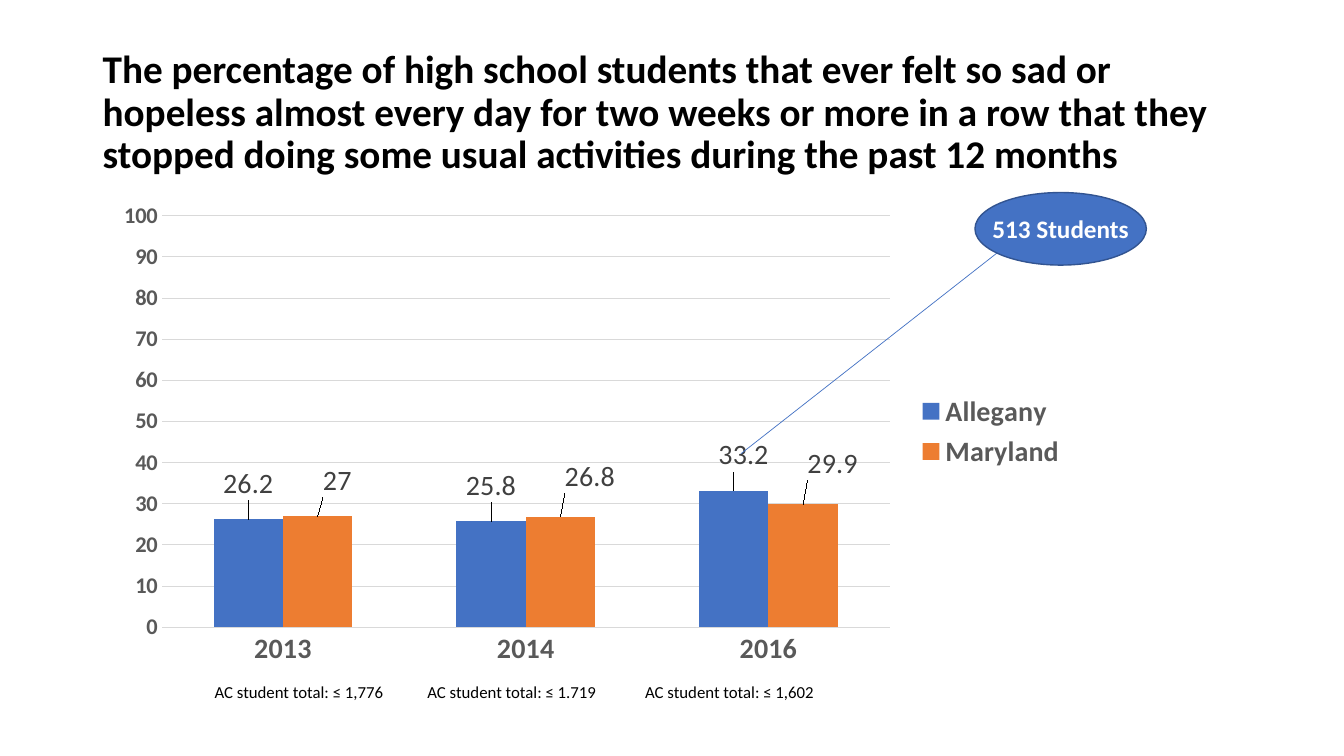
from lxml import etree
from pptx import Presentation
from pptx.chart.data import CategoryChartData
from pptx.dml.color import RGBColor
from pptx.enum.chart import XL_CHART_TYPE, XL_LABEL_POSITION, XL_LEGEND_POSITION, XL_TICK_MARK
from pptx.enum.shapes import MSO_CONNECTOR, MSO_SHAPE
from pptx.enum.text import MSO_ANCHOR, PP_ALIGN
from pptx.oxml.ns import qn
from pptx.util import Inches, Pt

TITLE = ("The percentage of high school students that ever felt so sad or hopeless "
         "almost every day for two weeks or more in a row that they stopped doing "
         "some usual activities during the past 12 months")
YEARS = ["2013", "2014", "2016"]
SERIES = [
    {"name": "Allegany", "values": [26.2, 25.8, 33.2], "color": "4472C4",
     "label_shifts": [(0.0, -0.03), (0.0, -0.03), (0.01, -0.03)]},
    {"name": "Maryland", "values": [27, 26.8, 29.9], "color": "ED7D31",
     "label_shifts": [(0.02, -0.03), (0.03, -0.04), (0.03, -0.04)]},
]
CALLOUT = "513 Students"
TOTALS = [
    (2.03, "AC student total: ≤ 1,776"),
    (4.14, "AC student total: ≤ 1.719"),
    (6.3, "AC student total: ≤ 1,602"),
]
PLOT_AREA = {"x": 0.07, "y": 0.06, "w": 0.74, "h": 0.84}
THEME = {
    "font": "Calibri", "text": "000000", "axis": "595959", "label": "404040",
    "grid": "D9D9D9", "accent": "4472C4", "outline": "325491", "light": "FFFFFF",
    "title_size": 28, "large": 20, "callout_size": 18, "tick_size": 16,
    "note_size": 12, "chart_size": 10,
}


def color(name):
    return RGBColor.from_string(THEME.get(name, name))


def style(font, size, tone, bold=False):
    font.name = THEME["font"]
    font.size = Pt(THEME[size])
    font.bold = bold
    font.color.rgb = color(tone)


def add_text(s, box, text, size, tone="text", bold=False, align=PP_ALIGN.LEFT):
    tf = s.shapes.add_textbox(*map(Inches, box)).text_frame
    tf.word_wrap = True
    p = tf.paragraphs[0]
    p.text = text
    p.alignment = align
    style(p.font, size, tone, bold)
    return tf


def manual_layout(values):
    layout = etree.Element(qn("c:layout"))
    manual = etree.SubElement(layout, qn("c:manualLayout"))
    for tag, value in values:
        etree.SubElement(manual, qn(f"c:{tag}")).set("val", str(value))
    return layout


def style_axis(axis, size):
    axis.major_tick_mark = axis.minor_tick_mark = XL_TICK_MARK.NONE
    axis.format.line.fill.background()
    style(axis.tick_labels.font, size, "axis", True)


def style_series(series, item):
    series.format.fill.solid()
    series.format.fill.fore_color.rgb = color(item["color"])
    labels = series.data_labels
    labels.show_value = True
    labels.position = XL_LABEL_POSITION.OUTSIDE_END
    style(labels.font, "large", "label")
    for i, (dx, dy) in enumerate(item["label_shifts"]):
        label = series.points[i].data_label
        style(label.font, "large", "label")
        label.position = XL_LABEL_POSITION.OUTSIDE_END
        idx = series._element.xpath(f"c:dLbls/c:dLbl/c:idx[@val='{i}']")[0]
        idx.addnext(manual_layout([("x", dx), ("y", dy)]))


def add_bars(s):
    data = CategoryChartData()
    data.categories = YEARS
    for item in SERIES:
        data.add_series(item["name"], item["values"])
    box = map(Inches, (0.92, 1.85, 9.76, 4.86))
    chart = s.shapes.add_chart(XL_CHART_TYPE.COLUMN_CLUSTERED, *box, data).chart
    style(chart.font, "chart_size", "text")
    chart.has_title = False
    chart.has_legend = True
    chart.legend.position = XL_LEGEND_POSITION.RIGHT
    chart.legend.include_in_layout = False
    style(chart.legend.font, "large", "axis", True)
    style_axis(chart.category_axis, "large")
    axis = chart.value_axis
    style_axis(axis, "tick_size")
    axis.minimum_scale, axis.maximum_scale, axis.major_unit = 0, 100, 10
    axis.has_major_gridlines = True
    grid = axis.major_gridlines.format.line
    grid.color.rgb = color("grid")
    grid.width = Pt(0.75)
    plot = chart.plots[0]
    plot.gap_width, plot.overlap, plot.vary_by_categories = 150, 0, False
    for series, item in zip(plot.series, SERIES):
        style_series(series, item)
    area = chart._chartSpace.xpath("c:chart/c:plotArea")[0]
    for old in area.findall(qn("c:layout")):
        area.remove(old)
    modes = [("layoutTarget", "inner"), ("xMode", "edge"), ("yMode", "edge")]
    area.insert(0, manual_layout(modes + list(PLOT_AREA.items())))


def add_callout(s):
    ends = map(Inches, (7.35, 4.5, 9.94, 2.47))
    line = s.shapes.add_connector(MSO_CONNECTOR.STRAIGHT, *ends)
    line.line.color.rgb = color("accent")
    line.line.width = Pt(0.5)
    etree.SubElement(line._element.spPr, qn("a:effectLst"))
    sp = s.shapes.add_shape(MSO_SHAPE.OVAL, *map(Inches, (9.67, 1.91, 1.7, 0.72)))
    sp.shadow.inherit = False
    sp.fill.solid()
    sp.fill.fore_color.rgb = color("accent")
    sp.line.color.rgb = color("outline")
    sp.line.width = Pt(1)
    add_text(s, (9.67, 2.07, 1.7, 0.4), CALLOUT, "callout_size", "light", True, PP_ALIGN.CENTER)


def main():
    prs = Presentation()
    prs.slide_width, prs.slide_height = Inches(13.33), Inches(7.5)
    s = prs.slides.add_slide(prs.slide_layouts[6])
    tf = add_text(s, (0.92, 0.4, 11.5, 1.45), TITLE, "title_size", bold=True)
    tf.vertical_anchor = MSO_ANCHOR.MIDDLE
    tf.paragraphs[0].line_spacing = 0.9
    add_bars(s)
    add_callout(s)
    for left, text in TOTALS:
        add_text(s, (left, 6.71, 1.92, 0.3), text, "note_size")
    prs.save("out.pptx")


if __name__ == "__main__":
    main()
